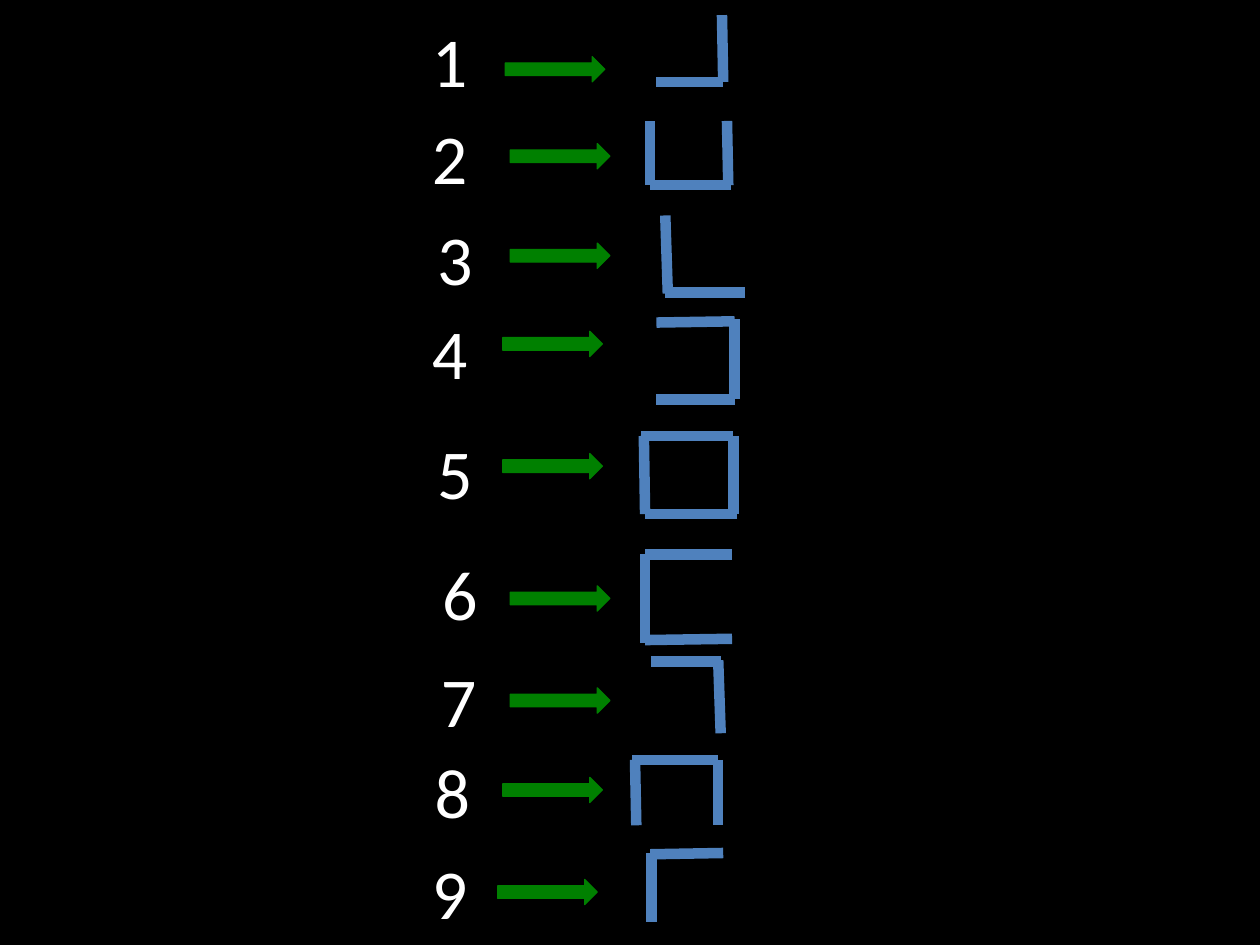
import pptx
import pptx.dml.color
import pptx.enum.shapes
import pptx.enum.text
import pptx.oxml.ns
import pptx.util
from lxml import etree
from pptx.util import Inches

WHITE, BLACK, BLUE, GREEN = "FFFFFF", "000000", "4F81BD", "008000"

# Each row: label position, arrow position, strokes as (x1, y1, x2, y2)
ROWS = [
    ((3.33, 0.09), (4.01, 0.45), [(5.73, 0.12, 5.74, 0.65), (5.21, 0.65, 5.74, 0.65)]),
    ((3.33, 0.86), (4.05, 1.14), [(5.77, 0.96, 5.78, 1.47), (5.16, 1.47, 5.8, 1.47),
                                  (5.16, 1.47, 5.16, 0.96)]),
    ((3.37, 1.66), (4.05, 1.93), [(5.28, 1.71, 5.3, 2.33), (5.28, 2.32, 5.91, 2.32)]),
    ((3.33, 2.41), (3.99, 2.63), [(5.21, 2.56, 5.83, 2.55), (5.83, 3.17, 5.83, 2.53),
                                  (5.83, 3.17, 5.21, 3.17)]),
    ((3.37, 3.36), (3.99, 3.6), [(5.12, 4.08, 5.11, 3.46), (5.82, 3.46, 5.09, 3.46),
                                 (5.82, 3.46, 5.82, 4.08), (5.85, 4.08, 5.12, 4.08)]),
    ((3.41, 4.32), (4.05, 4.65), [(5.81, 5.07, 5.12, 5.08), (5.12, 4.4, 5.12, 5.1),
                                  (5.12, 4.4, 5.81, 4.4)]),
    ((3.4, 5.17), (4.05, 5.46), [(5.72, 5.82, 5.7, 5.24), (5.72, 5.25, 5.17, 5.25)]),
    ((3.35, 5.89), (3.99, 6.17), [(5.05, 6.55, 5.04, 6.03), (5.7, 6.03, 5.02, 6.03),
                                  (5.7, 6.03, 5.7, 6.55)]),
    ((3.33, 6.69), (3.95, 6.98), [(5.74, 6.77, 5.16, 6.78), (5.17, 6.77, 5.17, 7.32)]),
]


def paint(fmt, color):
    """Give a fill a solid colour from a hex string."""
    fmt.solid()
    fmt.fore_color.rgb = pptx.dml.color.RGBColor.from_string(color)


def add_label(shapes, text, left, top):
    """Add a large white number."""
    sp = shapes.add_textbox(Inches(left), Inches(top), Inches(0.95), Inches(0.77))
    tf = sp.text_frame
    tf.text = text
    tf.word_wrap = True
    tf.auto_size = pptx.enum.text.MSO_AUTO_SIZE.SHAPE_TO_FIT_TEXT
    r = tf.paragraphs[0].runs[0]
    r.font.name = "Calibri"
    r.font.size = pptx.util.Pt(40)
    paint(r.font.fill, WHITE)


def add_stroke(shapes, *ends):
    """Add one thick blue line of a symbol."""
    line = shapes.add_connector(pptx.enum.shapes.MSO_CONNECTOR.STRAIGHT, *map(Inches, ends))
    line.line.width = pptx.util.Pt(6)
    paint(line.line.fill, BLUE)
    etree.SubElement(line._element.spPr, pptx.oxml.ns.qn("a:effectLst"))


def add_arrow(shapes, left, top):
    """Add a green block arrow pointing right."""
    sp = shapes.add_shape(pptx.enum.shapes.MSO_SHAPE.RIGHT_ARROW,
                          Inches(left), Inches(top), Inches(0.79), Inches(0.2))
    sp.shadow.inherit = False
    paint(sp.fill, GREEN)
    paint(sp.line.fill, GREEN)
    sp.line.width = pptx.util.Pt(0.75)


def main():
    """Build the slide of numbers and their symbols."""
    prs = pptx.Presentation()
    prs.slide_width, prs.slide_height = Inches(10), Inches(7.5)
    s = prs.slides.add_slide(prs.slide_layouts[6])
    paint(s.background.fill, BLACK)
    for number, (label, _, _) in enumerate(ROWS, 1):
        add_label(s.shapes, str(number), *label)
    for _, arrow, strokes in ROWS:
        group = s.shapes.add_group_shape()
        for ends in strokes:
            add_stroke(group.shapes, *ends)
        add_arrow(group.shapes, *arrow)
    prs.save("out.pptx")


if __name__ == "__main__":
    main()
